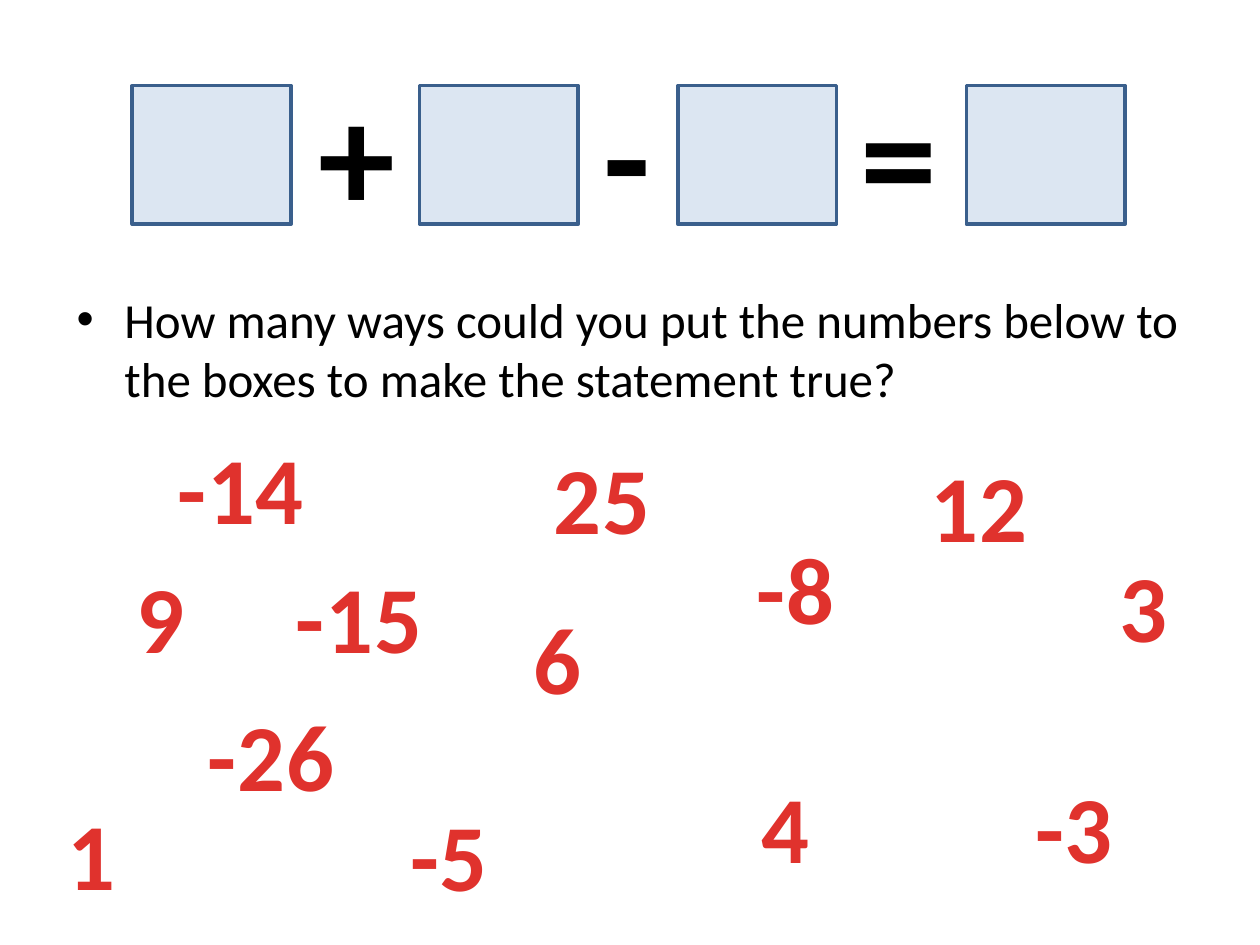
from lxml import etree
from pptx import Presentation
from pptx.dml.color import RGBColor
from pptx.enum.shapes import MSO_SHAPE
from pptx.enum.text import MSO_ANCHOR, MSO_AUTO_SIZE, PP_ALIGN
from pptx.oxml.ns import qn
from pptx.util import Inches, Pt

LEFT, CENTER = PP_ALIGN.LEFT, PP_ALIGN.CENTER
TOP, MIDDLE = MSO_ANCHOR.TOP, MSO_ANCHOR.MIDDLE
FIXED, GROW = MSO_AUTO_SIZE.NONE, MSO_AUTO_SIZE.SHAPE_TO_FIT_TEXT
RECTANGLE = MSO_SHAPE.RECTANGLE
TITLE_ONLY = 5

THEME = {
    "font": "Calibri",
    "ink": "000000",
    "box_fill": "DCE6F2",
    "box_line": "3A5F8C",
    "number_stops": [(0.25, "E0322D"), (1, "A2201C")],
    "operator_size": 88,
    "question_size": 28,
    "number_size": 54,
}

OPERATORS = [("+", 2.83), ("-", 4.98), ("=", 7.13)]
QUESTION = "How many ways could you put the numbers below to the boxes to make the statement true?"
BOX_LEFTS = [1.05, 3.33, 5.38, 7.67]
BOX_TOP, BOX_WIDTH, BOX_HEIGHT = 0.68, 1.26, 1.1
NUMBERS = [
    ("1", 0.43, 6.27), ("6", 4.13, 4.71), ("4", 5.94, 6.05),
    ("3", 8.78, 4.3), ("9", 0.98, 4.39), ("-3", 8.11, 6.05),
    ("-5", 3.15, 6.28), ("-8", 5.9, 4.16), ("-15", 2.24, 4.39),
    ("-26", 1.54, 5.48), ("12", 7.28, 3.51), ("25", 4.29, 3.44),
    ("-14", 1.3, 3.36),
]
INSET, DIGIT_WIDTH, MINUS_WIDTH, NUMBER_HEIGHT = 0.1, 0.39, 0.24, 1.01


def place(part, left, top, width, height):
    part.left, part.top = Inches(left), Inches(top)
    part.width, part.height = Inches(width), Inches(height)


def write(part, text, size, bold=False, align=LEFT, anchor=TOP, wrap=True,
          fit=FIXED, color=THEME["ink"], gradient=None, spacing=None):
    frame = part.text_frame
    frame.word_wrap, frame.auto_size, frame.vertical_anchor = wrap, fit, anchor
    paragraph = frame.paragraphs[0]
    paragraph.alignment = align
    run = paragraph.add_run()
    run.text = text
    font = run.font
    font.name, font.size, font.bold = THEME["font"], Pt(size), bold
    if gradient:
        font.fill.gradient()
        font.fill.gradient_angle = 270
        for stop, (position, stop_color) in zip(font.fill.gradient_stops, gradient):
            stop.position = position
            stop.color.rgb = RGBColor.from_string(stop_color)
    else:
        font.color.rgb = RGBColor.from_string(color)
    if spacing:
        font._element.set("spc", str(round(spacing * 100)))
    return paragraph


def add_bullet(paragraph, indent):
    paragraph.space_before = Pt(0.2 * THEME["question_size"])
    properties = paragraph._p.get_or_add_pPr()
    properties.set("marL", str(Inches(indent)))
    properties.set("indent", str(-Inches(indent)))
    etree.SubElement(properties, qn("a:buFont"), typeface="Arial")
    etree.SubElement(properties, qn("a:buChar"), char="•")


def add_center_tabs(paragraph, positions):
    tabs = etree.SubElement(paragraph._p.get_or_add_pPr(), qn("a:tabLst"))
    for position in positions:
        etree.SubElement(tabs, qn("a:tab"), pos=str(Inches(position)), algn="ctr")


def main():
    deck = Presentation()
    deck.slide_width, deck.slide_height = Inches(10), Inches(7.5)
    slide = deck.slides.add_slide(deck.slide_layouts[TITLE_ONLY])

    title, title_left = slide.shapes.title, 0.49
    place(title, title_left, 0.3, 9, 1.8)
    statement = "".join("\t" + sign for sign, _ in OPERATORS)
    equation = write(title, statement, THEME["operator_size"], bold=True, anchor=MIDDLE)
    add_center_tabs(equation, [x - title_left - INSET for _, x in OPERATORS])

    question = slide.shapes.add_textbox(
        Inches(0.51), Inches(2.25), Inches(9), Inches(1.34))
    add_bullet(write(question, QUESTION, THEME["question_size"]), 0.38)

    for left in BOX_LEFTS:
        box = slide.shapes.add_shape(
            RECTANGLE, Inches(left), Inches(BOX_TOP), Inches(BOX_WIDTH), Inches(BOX_HEIGHT))
        box.shadow.inherit = False
        box.fill.solid()
        box.fill.fore_color.rgb = RGBColor.from_string(THEME["box_fill"])
        box.line.color.rgb = RGBColor.from_string(THEME["box_line"])
        box.line.width = Pt(2)

    for value, left, top in NUMBERS:
        minus_count = value.count("-")
        digit_count = len(value) - minus_count
        width = 2 * INSET + digit_count * DIGIT_WIDTH + minus_count * MINUS_WIDTH
        number = slide.shapes.add_textbox(
            Inches(left), Inches(top), Inches(width), Inches(NUMBER_HEIGHT))
        write(number, value, THEME["number_size"], bold=True, align=CENTER, wrap=False,
              fit=GROW, gradient=THEME["number_stops"], spacing=0.5)

    deck.save("out.pptx")


if __name__ == "__main__":
    main()
